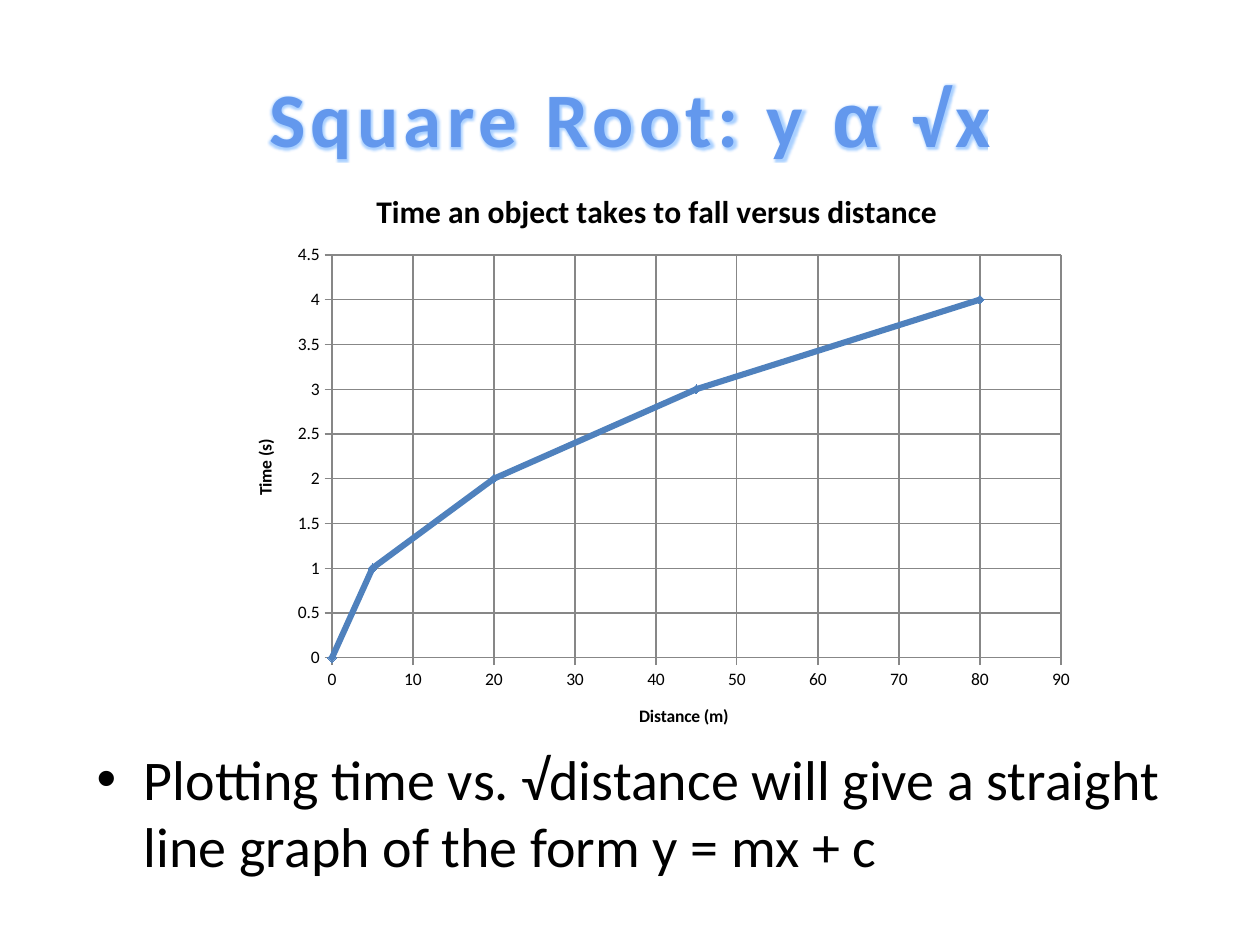
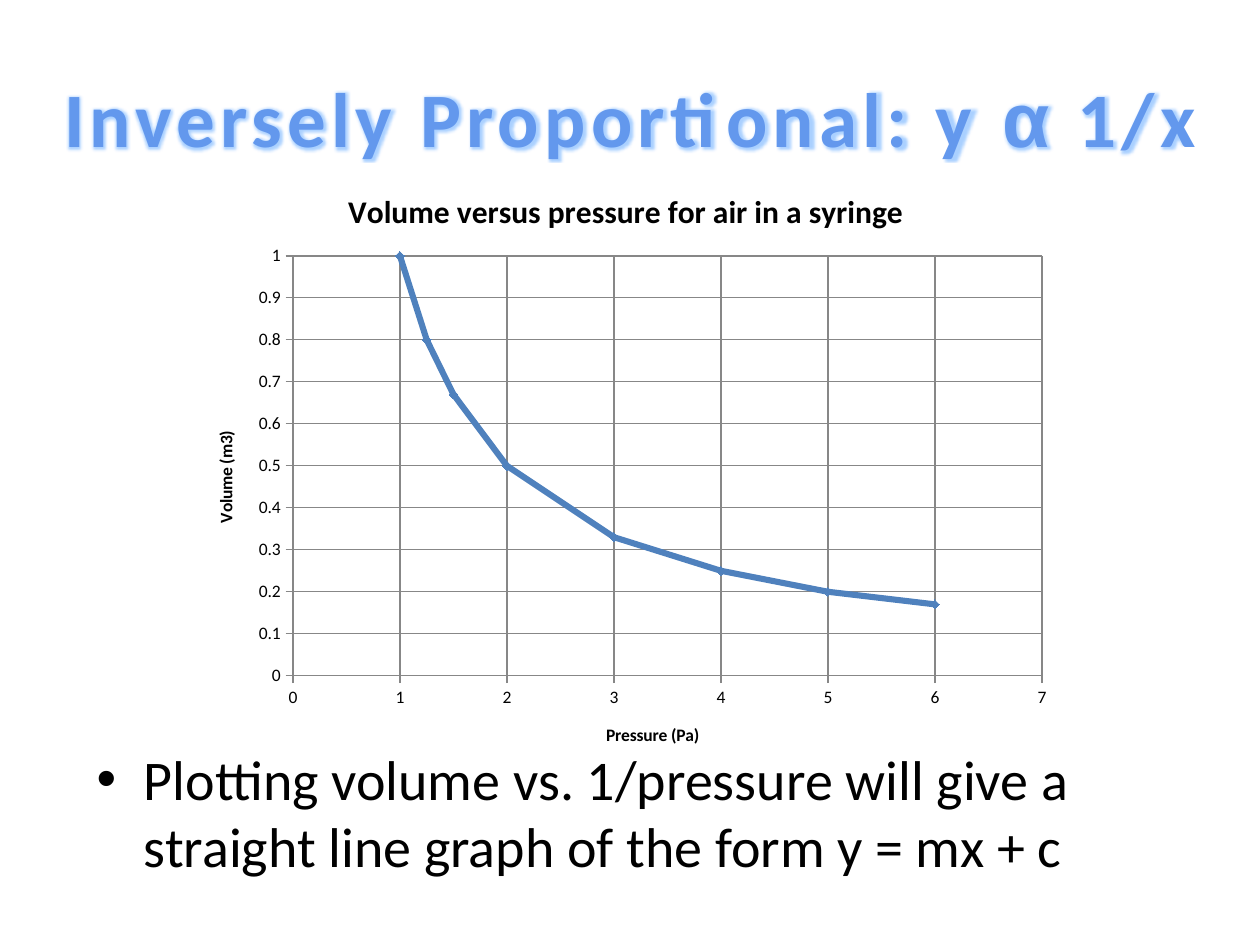
from lxml import etree
from pptx import Presentation
from pptx import util as u
from pptx.chart.data import XyChartData
from pptx.dml.color import RGBColor
from pptx.enum import chart as charts
from pptx.enum import text
from pptx.oxml import parse_xml
from pptx.oxml.ns import nsdecls, qn

EMU_PER_PX = 914400 / 126
BLACK = RGBColor(0x00, 0x00, 0x00)
TITLE_TOP = RGBColor(0x63, 0x98, 0xED)
TITLE_BOTTOM = RGBColor(0x26, 0x5E, 0xA0)
TITLE_EDGE = RGBColor(0xF4, 0xF6, 0xF9)
TITLE_GLOW = RGBColor(0x0D, 0x7B, 0xFF)
CURVE = RGBColor(0x4F, 0x81, 0xBD)
GRID = RGBColor(0x87, 0x87, 0x87)
LATIN_FONT = "Calibri"
GREEK_FONT = "Arial"


def px(length):
    return u.Emu(round(length * EMU_PER_PX))


def place(item, left, top, width, height):
    item.left, item.top = px(left), px(top)
    item.width, item.height = px(width), px(height)


def style_font(font, size, bold=False, name=LATIN_FONT):
    font.size = u.Pt(size)
    font.bold = bold
    font.name = name
    font.color.rgb = BLACK


def add_glowing_run(paragraph, words, font_name):
    run = paragraph.add_run()
    run.text = words
    style_font(run.font, 44, True, font_name)
    fill = run.font.fill
    fill.gradient()
    fill.gradient_angle = 270
    stops = ((TITLE_TOP, 0.1), (TITLE_BOTTOM, 0.75))
    for stop, (color, position) in zip(fill.gradient_stops, stops):
        stop.color.rgb = color
        stop.position = position
    properties = run.font._element
    properties.set("spc", "300")
    properties.insert(0, parse_xml(
        f'<a:ln {nsdecls("a")} w="11430"><a:solidFill>'
        f'<a:srgbClr val="{TITLE_EDGE}"/></a:solidFill></a:ln>'))
    properties.find(qn("a:gradFill")).addnext(parse_xml(
        f'<a:effectLst {nsdecls("a")}><a:glow rad="45500">'
        f'<a:srgbClr val="{TITLE_GLOW}"><a:alpha val="35000"/></a:srgbClr>'
        f'</a:glow></a:effectLst>'))


def set_title(slide, relation, alpha, variable):
    title = slide.shapes.title
    place(title, 0, 38, 1260, 158)
    frame = title.text_frame
    frame.auto_size = text.MSO_AUTO_SIZE.NONE
    frame.vertical_anchor = text.MSO_ANCHOR.MIDDLE
    heading = frame.paragraphs[0]
    heading.alignment = text.PP_ALIGN.CENTER
    add_glowing_run(heading, relation, LATIN_FONT)
    add_glowing_run(heading, alpha, GREEK_FONT)
    add_glowing_run(heading, variable, LATIN_FONT)


def set_conclusion(slide, sentence):
    body = slide.placeholders[1]
    place(body, 84, 738, 1134, 160)
    frame = body.text_frame
    frame.auto_size = text.MSO_AUTO_SIZE.NONE
    frame.text = sentence
    bullet = frame.paragraphs[0]
    bullet.space_before = u.Pt(0)
    style_font(bullet.runs[0].font, 32)


def format_axis(axis, name, maximum, step):
    axis.has_title = True
    axis.axis_title.text_frame.text = name
    style_font(axis.axis_title.text_frame.paragraphs[0].runs[0].font, 10, True)
    axis.minimum_scale = 0
    axis.maximum_scale = maximum
    axis.major_unit = step
    axis.major_tick_mark = charts.XL_TICK_MARK.OUTSIDE
    axis.minor_tick_mark = charts.XL_TICK_MARK.NONE
    axis.has_major_gridlines = True
    for line in (axis.format.line, axis.major_gridlines.format.line):
        line.color.rgb = GRID
        line.width = u.Pt(0.75)


def format_curve(series):
    series.smooth = True
    series.format.line.color.rgb = CURVE
    series.format.line.width = u.Pt(3.5)
    series.marker.style = charts.XL_MARKER_STYLE.DIAMOND
    series.marker.size = 5
    series.marker.format.fill.solid()
    series.marker.format.fill.fore_color.rgb = CURVE
    series.marker.format.line.color.rgb = CURVE


def fix_plot_area(chart, frame, plot):
    plot_area = chart.element.find(".//" + qn("c:plotArea"))
    for layout in plot_area.findall(qn("c:layout")):
        plot_area.remove(layout)
    left, top, width, height = frame
    fractions = {
        "x": (plot[0] - left) / width,
        "y": (plot[1] - top) / height,
        "w": plot[2] / width,
        "h": plot[3] / height,
    }
    layout = parse_xml(f'<c:layout {nsdecls("c")}><c:manualLayout/></c:layout>')
    settings = {"layoutTarget": "inner", "xMode": "edge", "yMode": "edge", **fractions}
    for tag, value in settings.items():
        etree.SubElement(layout[0], qn(f"c:{tag}")).set("val", str(value))
    plot_area.insert(0, layout)


def add_curve_chart(slide, frame, plot, heading, points, x_axis, y_axis):
    data = XyChartData()
    measurements = data.add_series("Series 1")
    for x, y in points:
        measurements.add_data_point(x, y)
    chart = slide.shapes.add_chart(
        charts.XL_CHART_TYPE.XY_SCATTER_SMOOTH, *map(px, frame), data).chart
    style_font(chart.font, 10)
    chart.has_legend = False
    chart.has_title = True
    chart.chart_title.text_frame.text = heading
    style_font(chart.chart_title.text_frame.paragraphs[0].runs[0].font, 18, True)
    chart.plots[0].vary_by_categories = False
    format_axis(chart.category_axis, *x_axis)
    format_axis(chart.value_axis, *y_axis)
    format_curve(chart.plots[0].series[0])
    fix_plot_area(chart, frame, plot)


def add_relation_slide(deck, title, conclusion, **curve):
    slide = deck.slides.add_slide(deck.slide_layouts[1])
    set_conclusion(slide, conclusion)
    set_title(slide, *title)
    add_curve_chart(slide, **curve)


def main():
    deck = Presentation()
    deck.slide_width, deck.slide_height = px(1260), px(945)
    add_relation_slide(
        deck,
        ("Square Root: y ", "α ", "√x"),
        "Plotting time vs. √distance will give a straight line graph of the form y = mx + c",
        frame=(228, 165, 858, 591),
        plot=(332, 255, 729, 403),
        heading="Time an object takes to fall versus distance",
        points=[(0, 0), (5, 1), (20, 2), (45, 3), (80, 4)],
        x_axis=("Distance (m)", 90, 10),
        y_axis=("Time (s)", 4.5, 0.5),
    )
    add_relation_slide(
        deck,
        ("Inversely Proportional: y ", "α", " 1/x"),
        "Plotting volume vs. 1/pressure will give a straight line graph of the form y = mx + c",
        frame=(189, 165, 874, 607),
        plot=(293, 256, 749, 420),
        heading="Volume versus pressure for air in a syringe",
        points=[(1, 1), (1.25, 0.8), (1.5, 0.67), (2, 0.5),
                (3, 0.33), (4, 0.25), (5, 0.2), (6, 0.17)],
        x_axis=("Pressure (Pa)", 7, 1),
        y_axis=("Volume (m3)", 1, 0.1),
    )
    deck.save("out.pptx")


if __name__ == "__main__":
    main()
